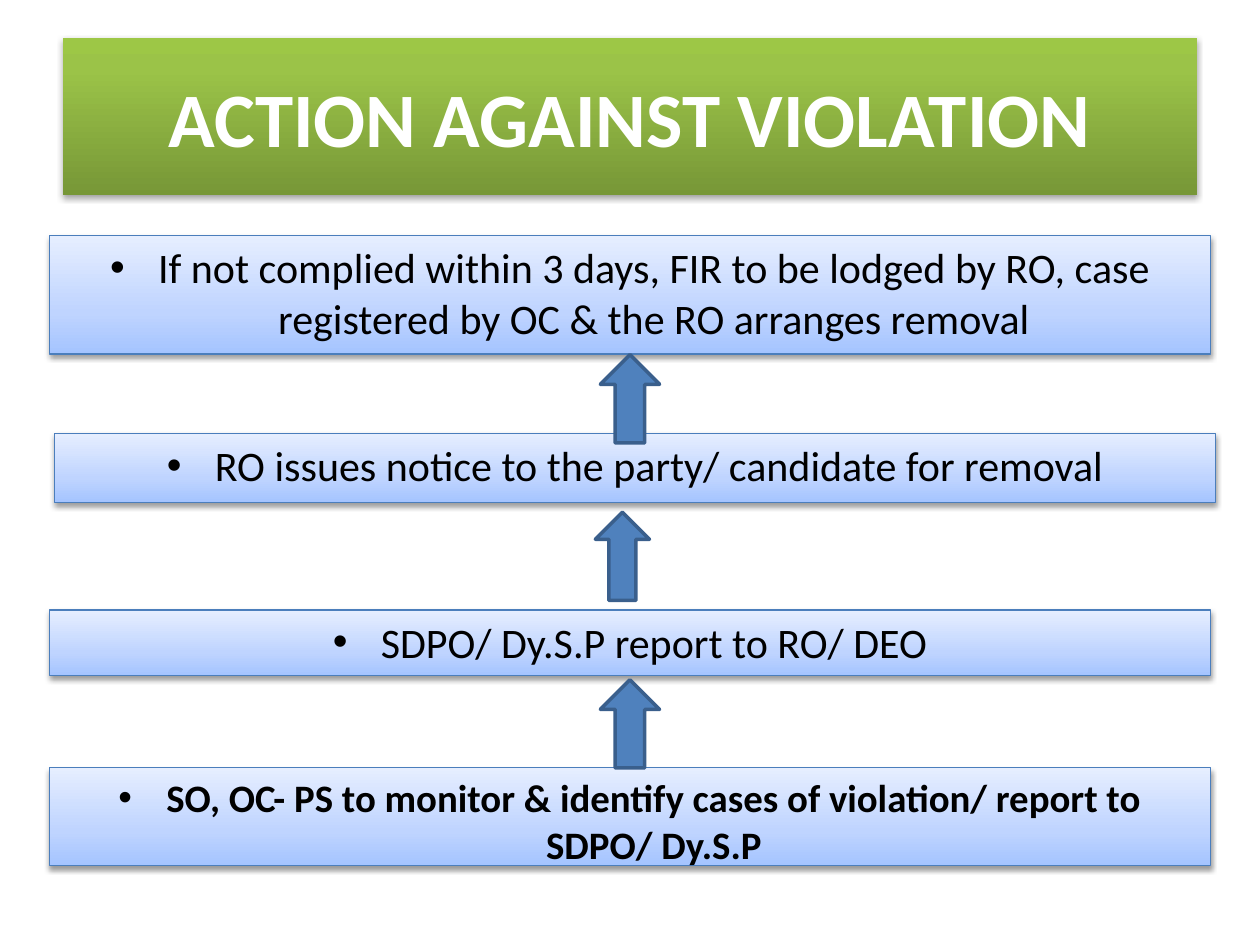
from copy import deepcopy

from lxml import etree
from pptx import Presentation
from pptx import util as u
from pptx.dml.color import RGBColor
from pptx.enum import shapes, text
from pptx.oxml.ns import qn

BLACK = RGBColor(0x00, 0x00, 0x00)
WHITE = RGBColor(0xFF, 0xFF, 0xFF)
STEP_LINE = RGBColor(0x4B, 0x7E, 0xBC)
ARROW_FILL = RGBColor(0x4F, 0x81, 0xBD)
ARROW_LINE = RGBColor(0x3A, 0x5F, 0x8C)
GREEN_STOPS = [
    (0, RGBColor(0x77, 0x97, 0x37)),
    (0.8, RGBColor(0x9B, 0xC3, 0x48)),
    (1, RGBColor(0x9D, 0xC7, 0x46)),
]
BLUE_STOPS = [
    (0, RGBColor(0xA4, 0xC4, 0xFF)),
    (0.35, RGBColor(0xBF, 0xD4, 0xFF)),
    (1, RGBColor(0xE6, 0xEE, 0xFF)),
]

# The slide is a grid of 10 columns by 7.5 rows
COLUMNS, ROWS = 10, 7.5


class FlowSlide:
    font_name = "Calibri"

    def __init__(self, presentation):
        self.column = presentation.slide_width / COLUMNS
        self.row = presentation.slide_height / ROWS
        self.slide = presentation.slides.add_slide(presentation.slide_layouts[5])

    def frame(self, left, top, width, height):
        return (int(left * self.column), int(top * self.row),
                int(width * self.column), int(height * self.row))

    def gradient(self, shape, stops):
        """Fill upwards with three colour stops."""
        shape.fill.gradient()
        shape.fill.gradient_angle = 90
        stop_list = shape._element.spPr.find(qn("a:gradFill")).find(qn("a:gsLst"))
        stop_list.append(deepcopy(stop_list[0]))
        for stop, (position, color) in zip(shape.fill.gradient_stops, stops):
            stop.position = position
            stop.color.rgb = color

    def drop_shadow(self, shape, distance, opacity):
        shape.shadow.inherit = False
        effects = shape._element.spPr.find(qn("a:effectLst"))
        shadow = etree.SubElement(
            effects, qn("a:outerShdw"), blurRad=str(u.Pt(3.1)),
            dist=str(u.Pt(distance)), dir="5400000", rotWithShape="0")
        color = etree.SubElement(shadow, qn("a:srgbClr"), val=str(BLACK))
        etree.SubElement(color, qn("a:alpha"), val=str(opacity * 1000))

    def style_text(self, paragraph, size, color, bold):
        paragraph.alignment = text.PP_ALIGN.CENTER
        font = paragraph.font
        font.name, font.size, font.bold = self.font_name, u.Pt(size), bold
        font.color.rgb = color

    def title(self, words, *place):
        title = self.slide.shapes.title
        title.left, title.top, title.width, title.height = self.frame(*place)
        self.gradient(title, GREEN_STOPS)
        title.line.fill.background()
        self.drop_shadow(title, 1.8, 35)
        title.text_frame.text = words
        title.text_frame.vertical_anchor = text.MSO_ANCHOR.MIDDLE
        self.style_text(title.text_frame.paragraphs[0], 44, WHITE, True)

    def step(self, words, left, top, height, size=24, bold=False):
        box = self.slide.shapes.add_shape(
            shapes.MSO_SHAPE.RECTANGLE, *self.frame(left, top, 9.22, height))
        self.gradient(box, BLUE_STOPS)
        box.line.color.rgb = STEP_LINE
        box.line.width = u.Pt(0.75)
        self.drop_shadow(box, 1.6, 38)
        frame = box.text_frame
        frame.word_wrap = True
        frame.vertical_anchor = text.MSO_ANCHOR.TOP
        frame.text = words
        paragraph = frame.paragraphs[0]
        properties = paragraph._p.get_or_add_pPr()
        indent = u.Inches(0.38)
        properties.set("marL", str(indent))
        properties.set("indent", str(-indent))
        etree.SubElement(properties, qn("a:buFont"), typeface="Arial")
        etree.SubElement(properties, qn("a:buChar"), char="•")
        self.style_text(paragraph, size, BLACK, bold)

    def up_arrow(self, left, top, thickness):
        arrow = self.slide.shapes.add_shape(
            shapes.MSO_SHAPE.RIGHT_ARROW, *self.frame(left, top, 0.7, thickness))
        arrow.rotation = 270
        arrow.shadow.inherit = False
        arrow.fill.solid()
        arrow.fill.fore_color.rgb = ARROW_FILL
        arrow.line.color.rgb = ARROW_LINE
        arrow.line.width = u.Pt(2)


def main():
    presentation = Presentation()
    presentation.slide_width = u.Inches(10)
    presentation.slide_height = u.Inches(7.5)
    flow = FlowSlide(presentation)

    flow.title("ACTION AGAINST VIOLATION", 0.5, 0.3, 9, 1.25)

    # Steps, from the first at the bottom to the last at the top
    flow.step("SO, OC- PS to monitor & identify cases of violation/ report to "
              "SDPO/ Dy.S.P", 0.39, 6.09, 0.78, size=22.2, bold=True)
    flow.step("SDPO/ Dy.S.P report to RO/ DEO", 0.39, 4.84, 0.52)
    flow.step("RO issues notice to the party/ candidate for removal",
              0.43, 3.44, 0.55)
    flow.step("If not complied within 3 days, FIR to be lodged by RO, case "
              "registered by OC & the RO arranges removal", 0.39, 1.87, 0.94)

    # Arrows between the steps
    for left, top, thickness in [(4.65, 5.51, 0.47), (4.59, 4.2, 0.43),
                                 (4.65, 2.93, 0.47)]:
        flow.up_arrow(left, top, thickness)

    presentation.save("out.pptx")


if __name__ == "__main__":
    main()
